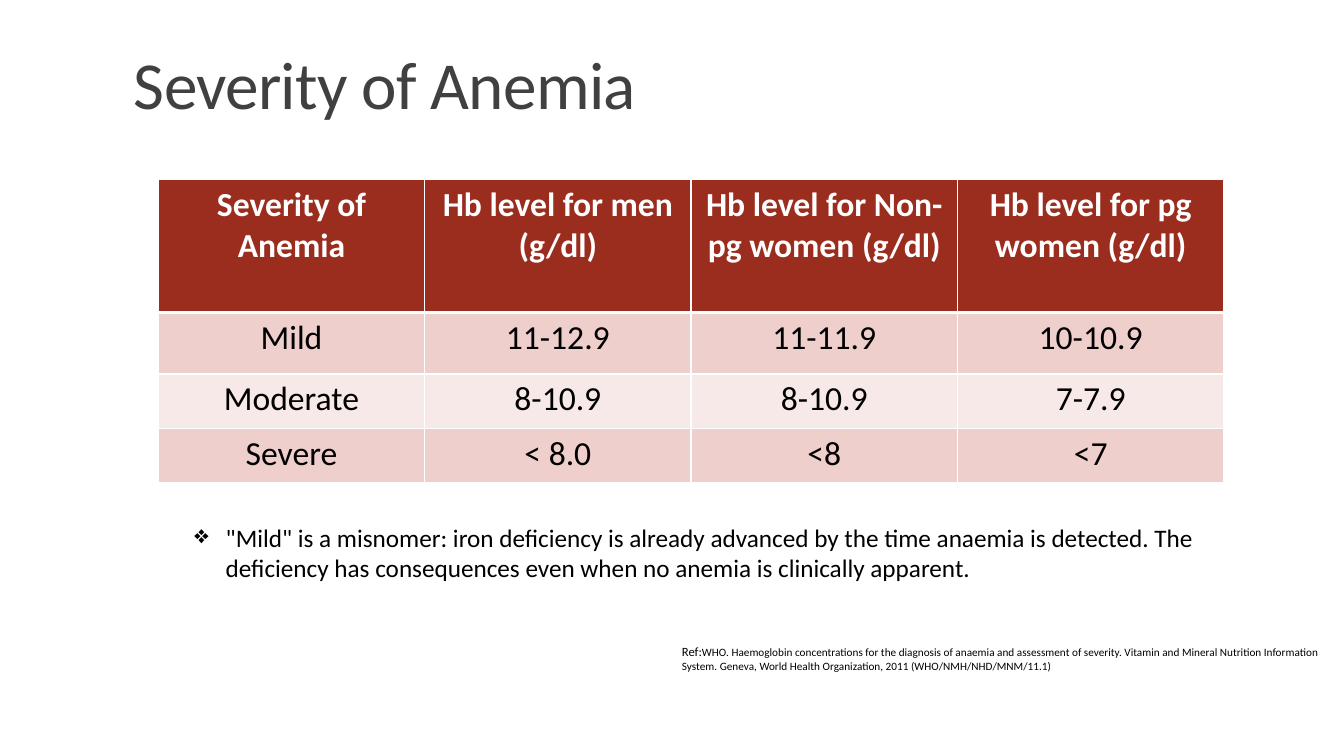
from lxml import etree
from pptx import Presentation
from pptx.dml.color import RGBColor
from pptx.enum.text import MSO_ANCHOR, PP_ALIGN
from pptx.oxml.ns import qn
from pptx.util import Inches, Pt

CENTER = PP_ALIGN.CENTER
TOP, BOTTOM = MSO_ANCHOR.TOP, MSO_ANCHOR.BOTTOM
FONT = "Calibri"
COLORS = {
    "title": "404040",
    "text": "000000",
    "header_text": "FFFFFF",
    "header": "9B2D1F",
    "band_dark": "EFCFCC",
    "band_light": "F7E9E8",
    "border": "FFFFFF",
}
SLIDE_WIDTH, SLIDE_HEIGHT = 13.33, 7.5

SEVERITY_ROWS = [
    ["Severity of Anemia", "Hb level for men (g/dl)",
     "Hb level for Non-pg women (g/dl)", "Hb level for pg women (g/dl)"],
    ["Mild", "11-12.9", "11-11.9", "10-10.9"],
    ["Moderate", "8-10.9", "8-10.9", "7-7.9"],
    ["Severe", "< 8.0", "<8", "<7"],
]
ROW_HEIGHTS = [1.32, 0.61, 0.54, 0.54]
NOTE = ('"Mild" is a misnomer: iron deficiency is already advanced by the time '
        "anaemia is detected. The deficiency has consequences even when no "
        "anemia is clinically apparent.")
REFERENCE = ("WHO. Haemoglobin concentrations for the diagnosis of anaemia and "
             "assessment of severity. Vitamin and Mineral Nutrition Information "
             "System. Geneva, World Health Organization, 2011 "
             "(WHO/NMH/NHD/MNM/11.1)")


def add_text(paragraph, text, size, color="text", bold=False, spacing=None):
    """Add a formatted run; spacing is in hundredths of a point."""
    run = paragraph.add_run()
    run.text = text
    run.font.name = FONT
    run.font.size = Pt(size)
    run.font.bold = bold
    run.font.color.rgb = RGBColor.from_string(COLORS[color])
    if spacing is not None:
        run.font._element.set("spc", str(spacing))


def add_text_box(slide, box, anchor=TOP):
    """Return the first paragraph of a new wrapping text box."""
    frame = slide.shapes.add_textbox(*map(Inches, box)).text_frame
    frame.word_wrap = True
    frame.vertical_anchor = anchor
    return frame.paragraphs[0]


def set_bullet(paragraph, character, indent):
    properties = paragraph._p.get_or_add_pPr()
    properties.set("marL", str(Inches(indent)))
    properties.set("indent", str(-Inches(indent)))
    etree.SubElement(properties, qn("a:buChar")).set("char", character)


def set_borders(cell, **widths):
    """Draw the four cell borders, given as points per side."""
    properties = cell._tc.get_or_add_tcPr()
    for side in ("L", "R", "T", "B"):
        line = etree.SubElement(properties, qn(f"a:ln{side}"))
        line.set("w", str(Pt(widths.get(side, 1))))
        fill = etree.SubElement(line, qn("a:solidFill"))
        etree.SubElement(fill, qn("a:srgbClr")).set("val", COLORS["border"])


def add_title(slide, box):
    paragraph = add_text_box(slide, box, BOTTOM)
    paragraph.line_spacing = 0.85
    add_text(paragraph, "Severity of Anemia", 48, "title", spacing=-50)


def add_severity_table(slide, box):
    row_count, column_count = len(SEVERITY_ROWS), len(SEVERITY_ROWS[0])
    table = slide.shapes.add_table(row_count, column_count, *map(Inches, box)).table
    for column in table.columns:
        column.width = Inches(box[2] / column_count)
    for row_index, texts in enumerate(SEVERITY_ROWS):
        table.rows[row_index].height = Inches(ROW_HEIGHTS[row_index])
        is_header = row_index == 0
        band = "band_dark" if row_index % 2 else "band_light"
        for column_index, text in enumerate(texts):
            cell = table.cell(row_index, column_index)
            set_borders(cell, B=3 if is_header else 1, T=3 if row_index == 1 else 1)
            cell.fill.solid()
            cell.fill.fore_color.rgb = RGBColor.from_string(
                COLORS["header" if is_header else band])
            paragraph = cell.text_frame.paragraphs[0]
            paragraph.alignment = CENTER
            add_text(paragraph, text, 24, "header_text" if is_header else "text",
                     bold=is_header)


def add_note(slide, box):
    paragraph = add_text_box(slide, box)
    set_bullet(paragraph, "❖", 0.31)
    add_text(paragraph, NOTE, 18)


def add_reference(slide, box):
    paragraph = add_text_box(slide, box)
    add_text(paragraph, "Ref:", 9)
    add_text(paragraph, REFERENCE, 8)


def main():
    presentation = Presentation()
    presentation.slide_width = Inches(SLIDE_WIDTH)
    presentation.slide_height = Inches(SLIDE_HEIGHT)
    slide = presentation.slides.add_slide(presentation.slide_layouts[6])
    add_title(slide, (1.23, 0.42, 11, 0.85))
    add_severity_table(slide, (1.57, 1.78, 10.57, sum(ROW_HEIGHTS)))
    add_note(slide, (1.83, 5.13, 10.32, 0.71))
    add_reference(slide, (SLIDE_WIDTH / 2, 6.34, SLIDE_WIDTH / 2, 0.39))
    presentation.save("out.pptx")


if __name__ == "__main__":
    main()
